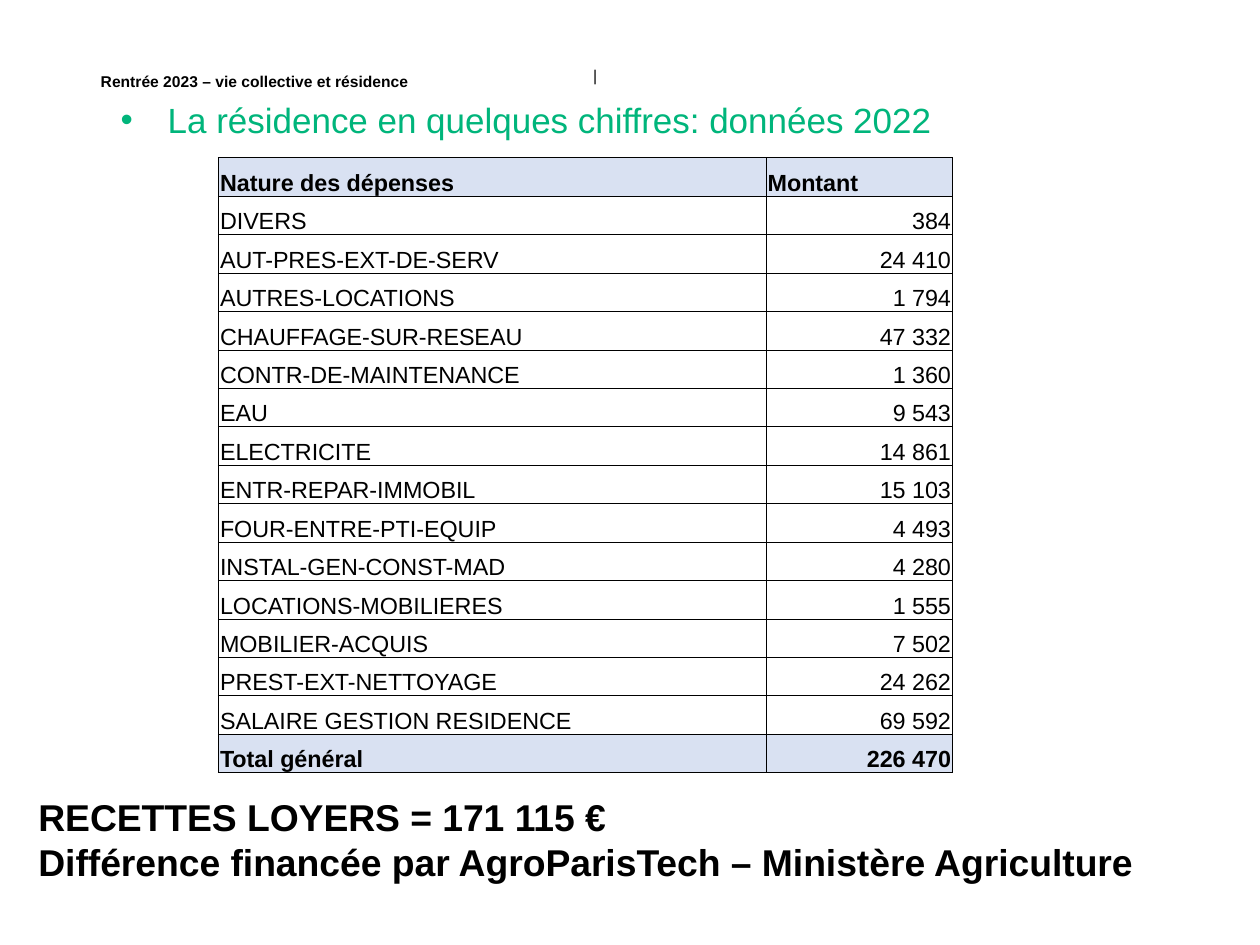
from lxml import etree
from pptx import Presentation
from pptx.dml.color import RGBColor
from pptx.enum import text
from pptx.oxml import ns
from pptx.util import Inches, Pt

BLACK = RGBColor(0x00, 0x00, 0x00)
GREEN = RGBColor(0x00, 0xB5, 0x7B)
PALE_BLUE = RGBColor(0xD9, 0xE1, 0xF2)

EXPENSES = [
    ("Nature des dépenses", "Montant"),
    ("DIVERS", "384"),
    ("AUT-PRES-EXT-DE-SERV", "24 410"),
    ("AUTRES-LOCATIONS", "1 794"),
    ("CHAUFFAGE-SUR-RESEAU", "47 332"),
    ("CONTR-DE-MAINTENANCE", "1 360"),
    ("EAU", "9 543"),
    ("ELECTRICITE", "14 861"),
    ("ENTR-REPAR-IMMOBIL", "15 103"),
    ("FOUR-ENTRE-PTI-EQUIP", "4 493"),
    ("INSTAL-GEN-CONST-MAD", "4 280"),
    ("LOCATIONS-MOBILIERES", "1 555"),
    ("MOBILIER-ACQUIS", "7 502"),
    ("PREST-EXT-NETTOYAGE", "24 262"),
    ("SALAIRE GESTION RESIDENCE", "69 592"),
    ("Total général", "226 470"),
]


def write(frame, lines, size, color=BLACK, bold=False, align=text.PP_ALIGN.LEFT, bullet=None):
    """Fill a text frame with one formatted paragraph per line."""
    for index, line in enumerate(lines.split("\n")):
        paragraph = frame.add_paragraph() if index else frame.paragraphs[0]
        paragraph.alignment = align
        if bullet:
            properties = paragraph._p.get_or_add_pPr()
            properties.set("marL", str(Inches(0.28)))
            properties.set("indent", str(-Inches(0.28)))
            etree.SubElement(properties, ns.qn("a:buFont")).set("typeface", "Arial")
            etree.SubElement(properties, ns.qn("a:buChar")).set("char", bullet)
        run = paragraph.add_run()
        run.text = line
        run.font.name = "Arial"
        run.font.size = Pt(size)
        run.font.bold = bold
        run.font.color.rgb = color


def add_text(slide, box, lines, size, anchor=text.MSO_ANCHOR.TOP, inset=0.1, **style):
    """Add a wrapping text box at left, top, width, height in inches."""
    frame = slide.shapes.add_textbox(*map(Inches, box)).text_frame
    frame.word_wrap = True
    frame.vertical_anchor = anchor
    frame.margin_left = frame.margin_right = Inches(inset)
    write(frame, lines, size, **style)


def add_borders(cell):
    """Draw thin black lines on the four sides of a cell."""
    properties = cell._tc.get_or_add_tcPr()
    for position, side in enumerate(("lnL", "lnR", "lnT", "lnB")):
        line = etree.Element(ns.qn(f"a:{side}"), w=str(Pt(0.5)))
        fill = etree.SubElement(line, ns.qn("a:solidFill"))
        etree.SubElement(fill, ns.qn("a:srgbClr")).set("val", str(BLACK))
        properties.insert(position, line)


def add_expenses(slide):
    """Add the table of expenses with shaded heading and total rows."""
    last = len(EXPENSES) - 1
    box = map(Inches, (1.3, 0.94, 4.37, 3.66))
    table = slide.shapes.add_table(len(EXPENSES), 2, *box).table
    table.first_row = table.horz_banding = False
    for column, width in zip(table.columns, (3.26, 1.11)):
        column.width = Inches(width)
    for row, values in enumerate(EXPENSES):
        shaded = row in (0, last)
        for column, value in enumerate(values):
            cell = table.cell(row, column)
            cell.vertical_anchor = text.MSO_ANCHOR.BOTTOM
            cell.margin_left = cell.margin_right = cell.margin_top = Inches(0.01)
            cell.margin_bottom = 0
            if shaded:
                cell.fill.solid()
                cell.fill.fore_color.rgb = PALE_BLUE
            else:
                cell.fill.background()
            add_borders(cell)
            align = text.PP_ALIGN.RIGHT if row and column else text.PP_ALIGN.LEFT
            write(cell.text_frame, value, 10, bold=shaded, align=align)


def main():
    """Build the slide of residence figures and save it."""
    deck = Presentation()
    deck.slide_width = Inches(7.5)
    deck.slide_height = deck.slide_width * 3 // 4
    slide = deck.slides.add_slide(deck.slide_layouts[6])
    add_text(slide, (0.6, 0.35, 2.94, 0.27), "Rentrée 2023 – vie collective et résidence", 6.75,
             anchor=text.MSO_ANCHOR.MIDDLE, inset=0, bold=True)
    add_text(slide, (3.45, 0.34, 0.18, 0.21), "|", 6.75, inset=0.08)
    add_text(slide, (0.62, 0.54, 6.75, 4.46), "La résidence en quelques chiffres: données 2022", 15,
             color=GREEN, bullet="•")
    add_expenses(slide)
    add_text(slide, (0.13, 4.68, 7.78, 0.64),
             "RECETTES LOYERS = 171 115 €\n"
             "Différence financée par AgroParisTech – Ministère Agriculture", 16, bold=True)
    deck.save("out.pptx")


if __name__ == "__main__":
    main()
